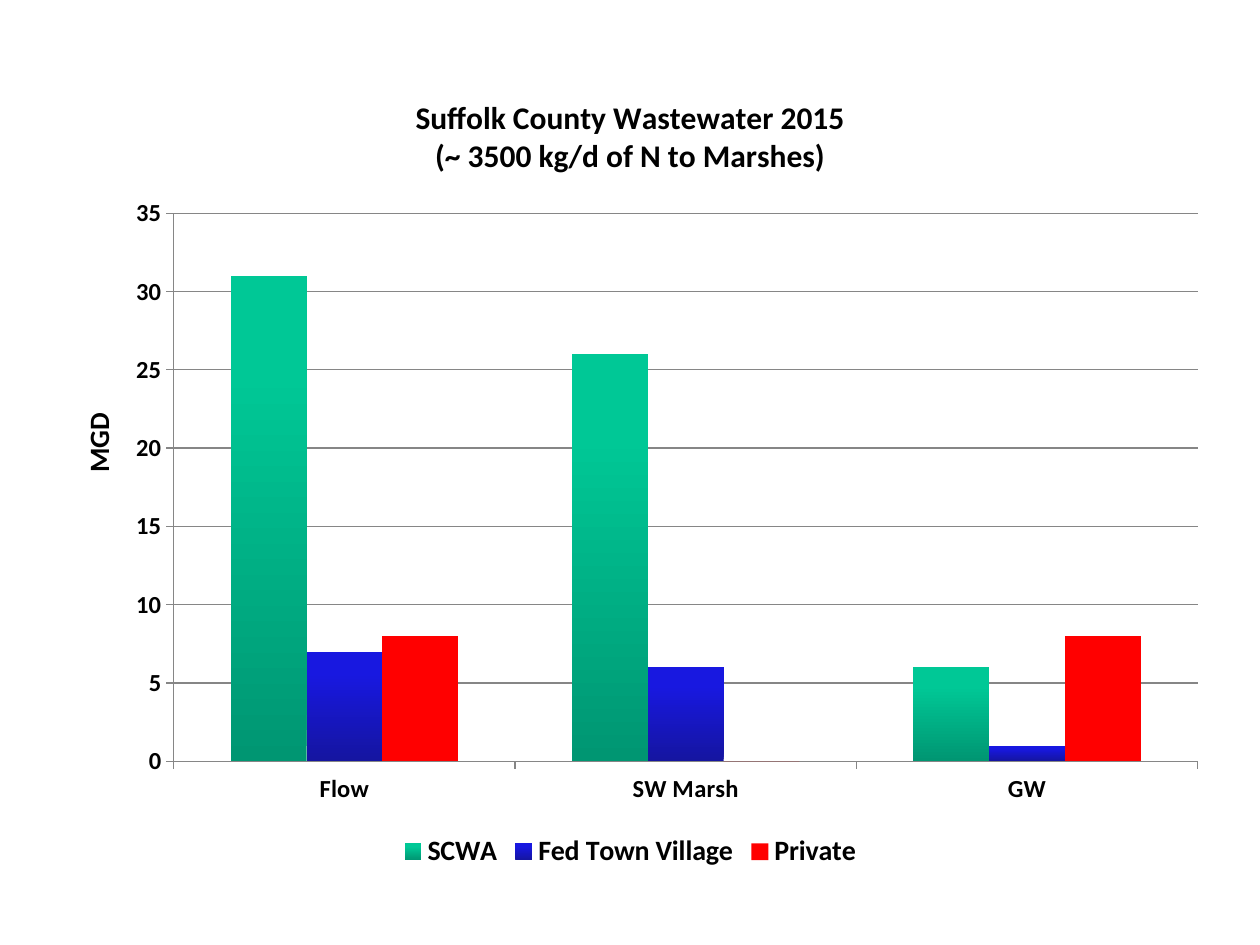
from dataclasses import dataclass

from lxml.etree import SubElement
from pptx import Presentation
from pptx.chart.data import CategoryChartData
from pptx.dml.color import RGBColor
from pptx.enum.chart import XL_CHART_TYPE as ChartType
from pptx.enum.chart import XL_LEGEND_POSITION as LegendPosition
from pptx.enum.chart import XL_TICK_MARK as TickMark
from pptx.oxml.ns import qn
from pptx.util import Cm, Pt


@dataclass(frozen=True)
class Theme:
    font: str = "Calibri"
    text: str = "000000"
    line: str = "868686"
    title_size: int = 18
    label_size: int = 16
    axis_size: int = 14


THEME = Theme()
CATEGORIES = ["Flow", "SW Marsh", "GW"]
# Series name, flows in MGD, colours from the bottom to the top of a bar
SERIES = [
    ("SCWA", [31, 26, 6], ["009672", "00C896"]),
    ("Fed Town Village", [7, 6, 1], ["1515A0", "1818E0"]),
    ("Private", [8, 0, 8], ["FF0000"]),
]


def style_font(font, size):
    font.name = THEME.font
    font.size = Pt(size)
    font.bold = True
    font.color.rgb = RGBColor.from_string(THEME.text)


def style_line(line):
    line.color.rgb = RGBColor.from_string(THEME.line)
    line.width = Pt(0.75)


def write_title(title, text, size):
    title.text_frame.text = text
    for paragraph in title.text_frame.paragraphs:
        style_font(paragraph.font, size)


def place_title(title, left, top):
    """Fix the corner of a title, in fractions of the chart's size."""
    element = title._element
    layout = element.find(qn("c:layout"))
    if layout is None:
        layout = SubElement(element, qn("c:layout"))
        element.find(qn("c:tx")).addnext(layout)
    manual = SubElement(layout, qn("c:manualLayout"))
    for tag, value in (("xMode", "edge"), ("yMode", "edge"), ("x", left), ("y", top)):
        SubElement(manual, qn(f"c:{tag}")).set("val", str(value))


def style_axis(axis):
    axis.major_tick_mark = TickMark.OUTSIDE
    axis.minor_tick_mark = TickMark.NONE
    style_font(axis.tick_labels.font, THEME.axis_size)
    style_line(axis.format.line)


def fill_bars(fill, colors):
    if len(colors) == 1:
        fill.solid()
        fill.fore_color.rgb = RGBColor.from_string(colors[0])
        return
    fill.gradient()
    fill.gradient_angle = 90
    for stop, position, color in zip(fill.gradient_stops, (0, 0.8), colors):
        stop.position = position
        stop.color.rgb = RGBColor.from_string(color)


def add_flow_chart(slide):
    data = CategoryChartData()
    data.categories = CATEGORIES
    for name, values, _ in SERIES:
        data.add_series(name, values)
    chart = slide.shapes.add_chart(
        ChartType.COLUMN_CLUSTERED, Cm(0.79), Cm(1.42), Cm(23.83), Cm(16.21), data
    ).chart
    style_font(chart.font, THEME.axis_size)
    write_title(
        chart.chart_title,
        "Suffolk County Wastewater 2015\n(~ 3500 kg/d of N to Marshes)",
        THEME.title_size,
    )

    plot = chart.plots[0]
    plot.gap_width = 150
    plot.overlap = 0
    plot.vary_by_categories = False
    for series, (_, _, colors) in zip(plot.series, SERIES):
        series.invert_if_negative = False
        fill_bars(series.format.fill, colors)

    style_axis(chart.category_axis)
    value_axis = chart.value_axis
    style_axis(value_axis)
    value_axis.minimum_scale = 0
    value_axis.maximum_scale = 35
    value_axis.major_unit = 5
    value_axis.tick_labels.number_format = "0"
    value_axis.tick_labels.number_format_is_linked = False
    value_axis.has_major_gridlines = True
    style_line(value_axis.major_gridlines.format.line)
    write_title(value_axis.axis_title, "MGD", THEME.label_size)
    place_title(value_axis.axis_title, 0.03, 0.42)

    chart.has_legend = True
    chart.legend.position = LegendPosition.BOTTOM
    chart.legend.include_in_layout = False
    style_font(chart.legend.font, THEME.label_size)


def main():
    presentation = Presentation()
    presentation.slide_width = Cm(25.4)
    presentation.slide_height = Cm(19.05)
    blank_layout = presentation.slide_layouts[6]
    add_flow_chart(presentation.slides.add_slide(blank_layout))
    presentation.save("out.pptx")


if __name__ == "__main__":
    main()
